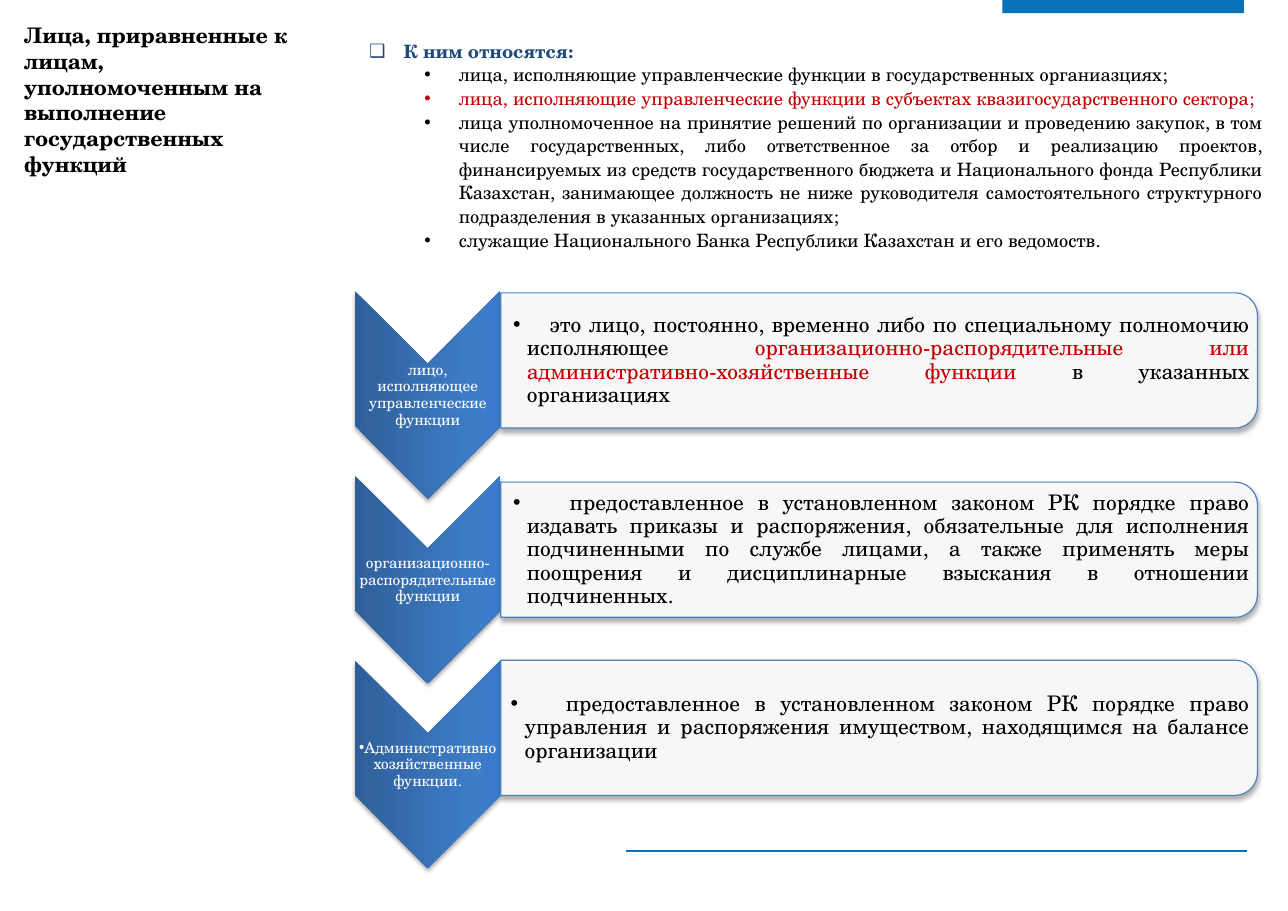
"""Build the slide on persons equated to those authorised to perform state functions."""
from copy import deepcopy

from lxml.etree import SubElement
from pptx import Presentation
from pptx.dml.color import RGBColor
from pptx.enum.shapes import MSO_CONNECTOR as Link, MSO_SHAPE as Shape
from pptx.enum.text import MSO_ANCHOR as Anchor, PP_ALIGN as Align
from pptx.oxml.ns import qn
from pptx.util import Pt

FONT = "TeX Gyre Schola"
BLACK = RGBColor(0, 0, 0)
WHITE = RGBColor(255, 255, 255)
RED = RGBColor(0xC0, 0, 0)
NAVY = RGBColor(0x1F, 0x49, 0x7D)
EDGE = RGBColor(0x4F, 0x81, 0xBD)
BAR = RGBColor(0x07, 0x72, 0xBA)
RULE = RGBColor(0x09, 0x71, 0xB4)
STOPS = [
    (0, RGBColor(0x2F, 0x5F, 0x99)),
    (0.8, RGBColor(0x3D, 0x7C, 0xC7)),
    (1, RGBColor(0x3A, 0x7C, 0xCB)),
]

TITLE = "Лица, приравненные к лицам, уполномоченным на выполнение государственных функций"
HEAD = "К ним относятся:"
ITEMS = [
    ("лица, исполняющие управленческие функции в государственных органиазциях;", BLACK),
    ("лица, исполняющие управленческие функции в субъектах квазигосударственного сектора;", RED),
    ("лица уполномоченное на принятие решений по организации и проведению закупок, "
     "в том числе государственных, либо ответственное за отбор и реализацию проектов, "
     "финансируемых из средств государственного бюджета и Национального фонда Республики "
     "Казахстан, занимающее должность не ниже руководителя самостоятельного структурного "
     "подразделения в указанных организациях;", BLACK),
    ("служащие Национального Банка Республики Казахстан и его ведомоств.", BLACK),
]
# label, label bullet, panel top, left inset, tab stop, panel runs
ROWS = [
    ("лицо, исполняющее управленческие функции", None, 191.2, 8, 24, [
        ("это лицо, постоянно, временно либо по специальному полномочию исполняющее ", BLACK),
        ("организационно-распорядительные или административно-хозяйственные функции ", RED),
        ("в указанных организациях", BLACK)]),
    ("организационно-распорядительные функции", None, 314.8, 8, 37, [
        ("предоставленное в установленном законом РК порядке право издавать приказы и "
         "распоряжения, обязательные для исполнения подчиненными по службе лицами, а также "
         "применять меры поощрения и дисциплинарные взыскания в отношении подчиненных.", BLACK)]),
    ("Административно хозяйственные функции.", "•", 431, 6.5, 36, [
        ("предоставленное в установленном законом РК порядке право управления и распоряжения "
         "имуществом, находящимся на балансе организации", BLACK)]),
]


def style(run, size, color, bold=False):
    """Set the font of one run."""
    font = run.font
    font.name, font.size, font.bold = FONT, Pt(size), bold
    font.color.rgb = color


def bullet(par, char, left=0, hang=0, tab=None):
    """Give a paragraph a bullet, a hanging indent and a tab stop."""
    props = par._p.get_or_add_pPr()
    props.set("marL", str(Pt(left)))
    props.set("indent", str(-Pt(hang)))
    SubElement(props, qn("a:buFont"), typeface="Arial")
    SubElement(props, qn("a:buChar"), char=char)
    if tab:
        tabs = SubElement(props, qn("a:tabLst"))
        SubElement(tabs, qn("a:tab"), pos=str(Pt(tab)), algn="l")


def shade(shape):
    """Put a soft shadow below a shape."""
    shape.shadow.inherit = False
    effects = shape._element.spPr.find(qn("a:effectLst"))
    drop = SubElement(effects, qn("a:outerShdw"), blurRad=str(Pt(3.1)), dist=str(Pt(1.8)),
                      dir="5400000", rotWithShape="0")
    tint = SubElement(drop, qn("a:srgbClr"), val="000000")
    SubElement(tint, qn("a:alpha"), val="35000")


def upright(slide, kind, left, top, wide, high):
    """Add a shape turned by 90 degrees that fills the given box."""
    shape = slide.shapes.add_shape(kind, Pt(left + (wide - high) / 2),
                                   Pt(top + (high - wide) / 2), Pt(high), Pt(wide))
    shape.rotation = 90
    return shape


def chevron(slide, left, top, wide, high):
    """Add a shaded chevron that points down."""
    shape = upright(slide, Shape.CHEVRON, left, top, wide, high)
    shape.fill.gradient()
    shape.fill.gradient_angle = 90
    stops = shape._element.spPr.find(qn("a:gradFill")).find(qn("a:gsLst"))
    stops.insert(1, deepcopy(stops[0]))
    for stop, (place, color) in zip(shape.fill.gradient_stops, STOPS):
        stop.position = place
        stop.color.rgb = color
    shape.line.fill.background()
    shade(shape)


def panel(slide, left, top, wide, high):
    """Add a pale panel rounded on its right side."""
    shape = upright(slide, Shape.ROUND_2_SAME_RECTANGLE, left, top, wide, high)
    shape.fill.solid()
    shape.fill.fore_color.rgb = WHITE
    tint = shape._element.spPr.find(qn("a:solidFill"))[0]
    SubElement(tint, qn("a:alpha"), val="90000")
    shape.line.color.rgb = EDGE
    shape.line.width = Pt(0.75)
    shade(shape)


def label(slide, left, top, wide, high, inset, align):
    """Add a centred text box and return its first paragraph."""
    frame = slide.shapes.add_textbox(Pt(left), Pt(top), Pt(wide), Pt(high)).text_frame
    frame.word_wrap = True
    frame.vertical_anchor = Anchor.MIDDLE
    frame.margin_left = Pt(inset)
    frame.margin_right = frame.margin_top = frame.margin_bottom = Pt(0.7)
    par = frame.paragraphs[0]
    par.alignment, par.line_spacing = align, 0.9
    return par


def main():
    """Draw and save the slide."""
    deck = Presentation()
    deck.slide_width, deck.slide_height = Pt(841), Pt(594.7)
    slide = deck.slides.add_slide(deck.slide_layouts[5])

    bar = slide.shapes.add_shape(Shape.RECTANGLE, Pt(654.5), 0, Pt(157.7), Pt(8.6))
    bar.fill.solid()
    bar.fill.fore_color.rgb = BAR
    bar.line.fill.background()
    bar.shadow.inherit = False

    rule = slide.shapes.add_connector(Link.STRAIGHT, Pt(409), Pt(555.5), Pt(814), Pt(555.5))
    rule.line.color.rgb = RULE
    rule.line.width = Pt(1.75)
    SubElement(rule._element.spPr, qn("a:effectLst"))

    title = slide.shapes.title
    title.left, title.top, title.width, title.height = Pt(8.6), Pt(10.8), Pt(194), Pt(109)
    frame = title.text_frame
    frame.text = TITLE
    frame.word_wrap, frame.vertical_anchor = True, Anchor.TOP
    frame.paragraphs[0].alignment = Align.LEFT
    style(frame.paragraphs[0].runs[0], 14, BLACK, True)

    frame = slide.shapes.add_textbox(Pt(234), Pt(21.6), Pt(598), Pt(146)).text_frame
    frame.word_wrap = True
    for i, (text, color) in enumerate([(HEAD, NAVY)] + ITEMS):
        par = frame.add_paragraph() if i else frame.paragraphs[0]
        par.text = text
        par.alignment, par.line_spacing = Align.JUSTIFY, 1.07
        bullet(par, "•" if i else "❑", 58.5 if i else 22.5, 22.5)
        style(par.runs[0], 12, color, i == 0)

    for i, (name, mark, top, inset, tab, parts) in enumerate(ROWS):
        peak = 190.1 + i * 120.6
        chevron(slide, 231.8, peak, 95, 135.4)
        par = label(slide, 231.8, peak + 47.5, 95, 41, 0.7, Align.CENTER)
        par.text = name
        style(par.runs[0], 10, WHITE)
        if mark:
            bullet(par, mark)

        panel(slide, 327, top, 494, 88.2)
        par = label(slide, 327, top + 4.2, 489.6, 80, inset, Align.JUSTIFY)
        par.text = "\t"
        bullet(par, "•", 9, 9, tab)
        for text, color in parts:
            par.add_run().text = text
            style(par.runs[-1], 14, color)
        style(par.runs[0], 14, BLACK)

    deck.save("out.pptx")


if __name__ == "__main__":
    main()
